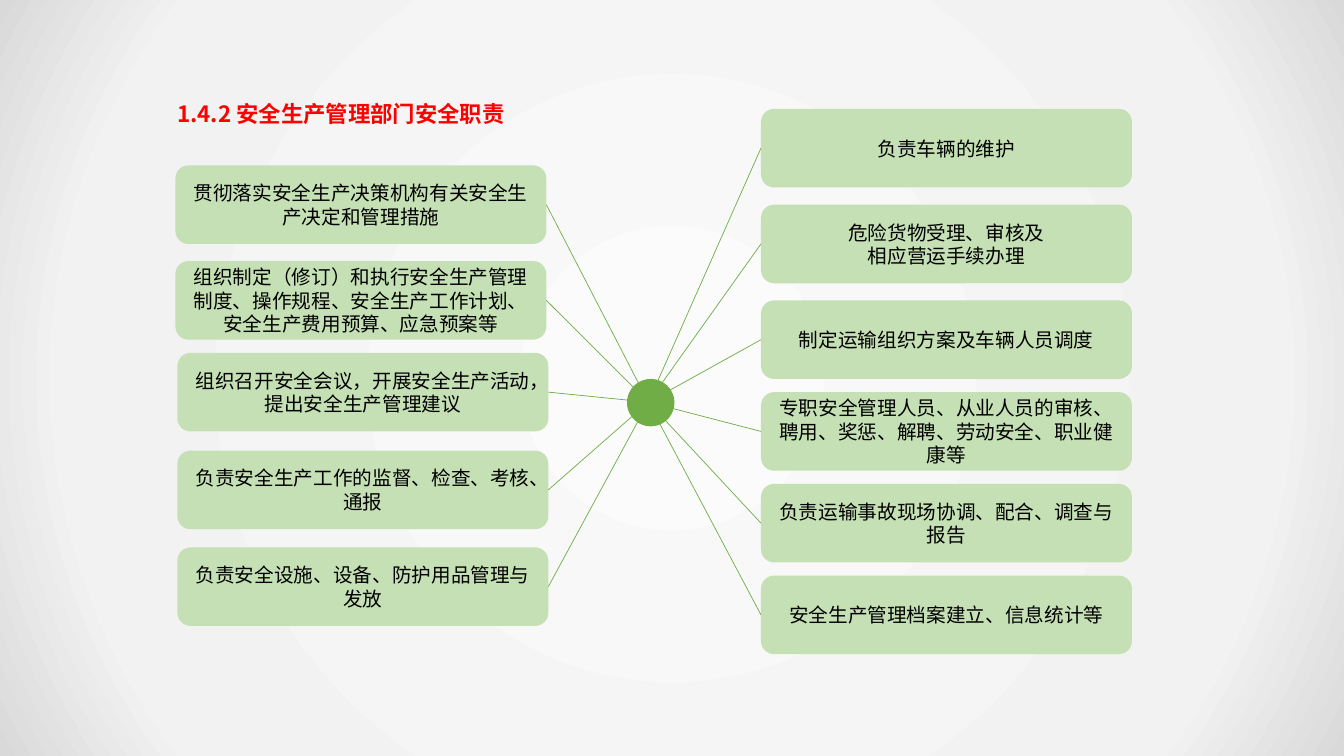
from dataclasses import dataclass

from pptx import Presentation
from pptx.dml.color import RGBColor
from pptx.enum.shapes import MSO_CONNECTOR, MSO_SHAPE
from pptx.enum.text import MSO_ANCHOR, MSO_AUTO_SIZE, PP_ALIGN
from pptx.oxml import parse_xml
from pptx.oxml.ns import nsdecls, qn
from pptx.oxml.xmlchemy import OxmlElement
from pptx.shapes.autoshape import Shape
from pptx.slide import Slide
from pptx.text.text import TextFrame
from pptx.util import Inches, Length, Pt

WIDTH, HEIGHT = Inches(13.33), Inches(7.5)
FONT = "Noto Sans CJK SC"
COLORS = {"title": "FF0000", "box": "C5E0B4", "accent": "70AD47", "text": "000000"}
BACKDROP = {0: "FBFBFB", 79: "F2F2F2", 100: "D9D9D9"}

BOX_W, BOX_H = 27.6, 10.4
LEFT_SITE, RIGHT_SITE = 1, 3
HUB_CENTER = (48.24, 53.2)

TITLE_FORMAT = {"size": Pt(16), "bold": True, "name": FONT}
BODY_FORMAT = {"size": Pt(14), "bold": False, "name": FONT}


@dataclass(frozen=True)
class Duty:
    top: float
    text: str


@dataclass(frozen=True)
class Column:
    left: float
    site: int
    duties: tuple[Duty, ...]


COLUMNS = (
    Column(13.05, RIGHT_SITE, (
        Duty(21.87, "贯彻落实安全生产决策机构有关安全生产决定和管理措施"),
        Duty(34.53, "组织制定（修订）和执行安全生产管理制度、操作规程、安全生产工作计划、安全生产费用预算、应急预案等"),
    )),
    Column(13.2, RIGHT_SITE, (
        Duty(46.67, "组织召开安全会议，开展安全生产活动，提出安全生产管理建议"),
        Duty(59.6, "负责安全生产工作的监督、检查、考核、通报"),
        Duty(72.4, "负责安全设施、设备、防护用品管理与发放"),
    )),
    Column(56.62, LEFT_SITE, (
        Duty(14.4, "负责车辆的维护"),
        Duty(27.07, "危险货物受理、审核及\n相应营运手续办理"),
        Duty(39.73, "制定运输组织方案及车辆人员调度"),
        Duty(51.87, "专职安全管理人员、从业人员的审核、聘用、奖惩、解聘、劳动安全、职业健康等"),
        Duty(64, "负责运输事故现场协调、配合、调查与报告"),
        Duty(76.13, "安全生产管理档案建立、信息统计等"),
    )),
)


def across(share: float) -> Length:
    return Length(round(WIDTH * share / 100))


def down(share: float) -> Length:
    return Length(round(HEIGHT * share / 100))


def rgb(name: str) -> RGBColor:
    return RGBColor.from_string(COLORS[name])


def write(tf: TextFrame, text: str, font: dict, color: str, align: PP_ALIGN) -> None:
    tf.word_wrap = True
    tf.text = text
    for p in tf.paragraphs:
        p.alignment = align
        for r in p.runs:
            for key, value in font.items():
                setattr(r.font, key, value)
            r.font.color.rgb = rgb(color)
            ea = OxmlElement("a:ea")
            ea.set("typeface", FONT)
            r.font._element.find(qn("a:latin")).addnext(ea)


def paint_background(s: Slide) -> None:
    s.background.fill.gradient()
    grad = next(s.element.iter(qn("a:gradFill")))
    stops = "".join(
        f'<a:gs pos="{pos * 1000}"><a:srgbClr val="{color}"/></a:gs>'
        for pos, color in BACKDROP.items()
    )
    grad.getparent().replace(grad, parse_xml(
        f'<a:gradFill {nsdecls("a")} rotWithShape="1"><a:gsLst>{stops}</a:gsLst>'
        '<a:path path="circle"><a:fillToRect l="50000" t="50000" r="50000" b="50000"/>'
        '</a:path></a:gradFill>'
    ))


def add_title(s: Slide, text: str) -> None:
    sp = s.shapes.title
    sp.left, sp.top, sp.width, sp.height = across(12.45), down(11.73), across(30.23), down(5.87)
    tf = sp.text_frame
    write(tf, text, TITLE_FORMAT, "title", PP_ALIGN.LEFT)
    tf.vertical_anchor = MSO_ANCHOR.TOP
    tf.auto_size = MSO_AUTO_SIZE.SHAPE_TO_FIT_TEXT
    p = tf.paragraphs[0]
    for key, value in {"line_spacing": 1.25, "space_before": Pt(0)}.items():
        setattr(p, key, value)


def add_solid(s: Slide, kind: MSO_SHAPE, left: float, top: float,
              width: float, height: float, color: str) -> Shape:
    sp = s.shapes.add_shape(kind, across(left), down(top), across(width), down(height))
    sp.shadow.inherit = False
    sp.fill.solid()
    sp.fill.fore_color.rgb = rgb(color)
    sp.line.fill.background()
    return sp


def add_duty(s: Slide, left: float, duty: Duty) -> Shape:
    sp = add_solid(s, MSO_SHAPE.ROUNDED_RECTANGLE, left, duty.top, BOX_W, BOX_H, "box")
    tf = sp.text_frame
    write(tf, duty.text, BODY_FORMAT, "text", PP_ALIGN.CENTER)
    tf.vertical_anchor = MSO_ANCHOR.MIDDLE
    return sp


def add_spoke(s: Slide, box: Shape, site: int) -> None:
    x, y = across(HUB_CENTER[0]), down(HUB_CENTER[1])
    spoke = s.shapes.add_connector(MSO_CONNECTOR.STRAIGHT, x, y, x, y)
    spoke.end_connect(box, site)
    spoke.line.color.rgb = rgb("accent")
    spoke.line.width = Pt(0.5)
    spoke._element.spPr.append(OxmlElement("a:effectLst"))


def main() -> None:
    prs = Presentation()
    prs.slide_width, prs.slide_height = WIDTH, HEIGHT
    s = prs.slides.add_slide(prs.slide_layouts[5])
    paint_background(s)
    add_title(s, "1.4.2 安全生产管理部门安全职责")
    boxes = [
        (add_duty(s, column.left, duty), column.site)
        for column in COLUMNS
        for duty in column.duties
    ]
    add_solid(s, MSO_SHAPE.OVAL, 46.65, 50.13, 3.53, 6.27, "accent")
    for box, site in boxes:
        add_spoke(s, box, site)
    prs.save("out.pptx")


if __name__ == "__main__":
    main()
